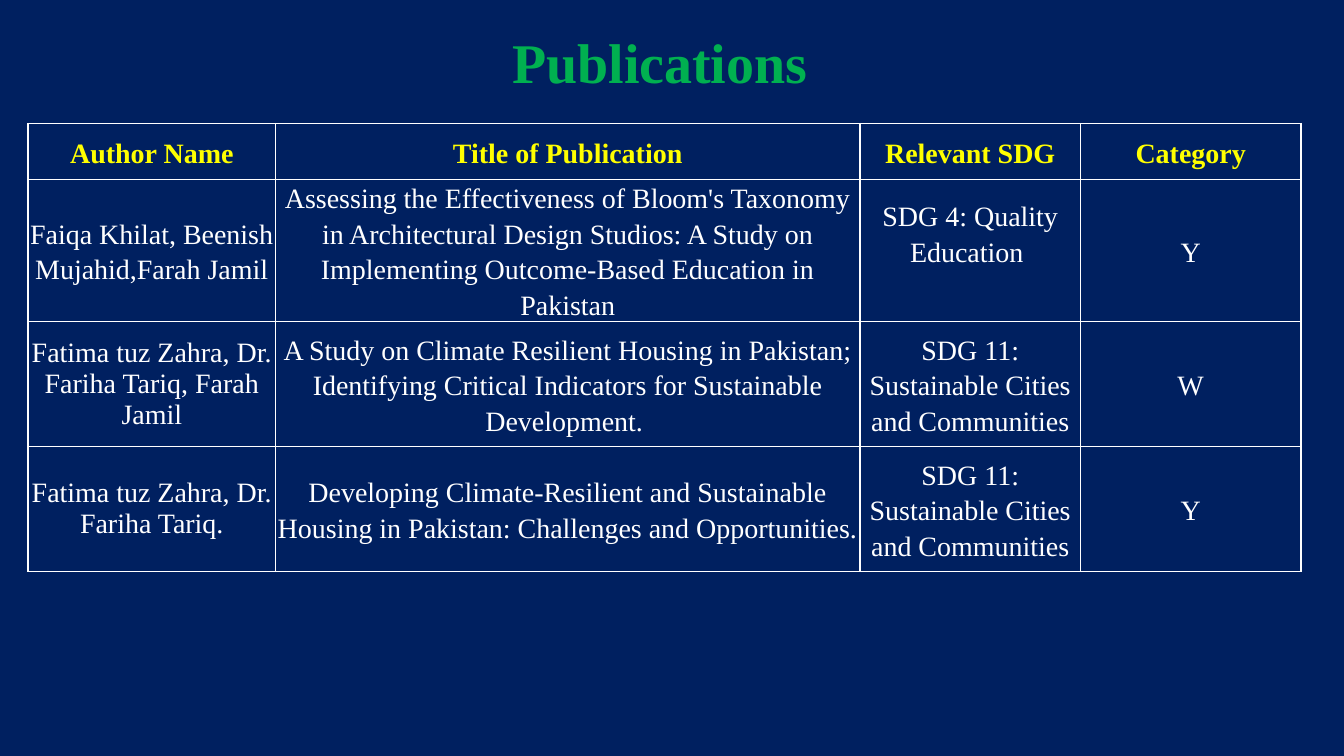
import dataclasses

import pptx
import pptx.dml.color
import pptx.enum.text
import pptx.oxml
import pptx.oxml.ns
import pptx.util

ALIGN = pptx.enum.text.PP_ALIGN
ANCHOR = pptx.enum.text.MSO_ANCHOR


@dataclasses.dataclass(frozen=True)
class Theme:
    font: str = "Times New Roman"
    back: str = "002060"
    title: str = "00B050"
    head: str = "FFFF00"
    body: str = "FFFFFF"
    edge: str = "FFFFFF"
    big: int = 30
    small: int = 15
    pad: float = 5.4


def rgb(code):
    return pptx.dml.color.RGBColor.from_string(code)


def write(frame, text, *, font, size, color, bold=False, lead=1.15):
    para = frame.paragraphs[0]
    para.alignment = ALIGN.CENTER
    para.line_spacing = lead
    run = para.add_run()
    run.text = text
    run.font.name = font
    run.font.size = pptx.util.Pt(size)
    run.font.color.rgb = rgb(color)
    run.font.bold = bold


def inset(item, side, top, base):
    item.margin_left = item.margin_right = pptx.util.Pt(side)
    item.margin_top = pptx.util.Pt(top)
    item.margin_bottom = pptx.util.Pt(base)


def border(cell, color):
    props = cell._tc.get_or_add_tcPr()
    for spot, side in enumerate(("lnL", "lnR", "lnT", "lnB")):
        props.insert(spot, pptx.oxml.parse_xml(
            f'<a:{side} {pptx.oxml.ns.nsdecls("a")} w="12700">'
            f'<a:solidFill><a:srgbClr val="{color}"/></a:solidFill></a:{side}>'))


class Page:
    cols = 100

    def __init__(self, deck, theme):
        self.theme = theme
        self.unit = deck.slide_width / self.cols
        self.slide = deck.slides.add_slide(deck.slide_layouts[6])
        fill = self.slide.background.fill
        fill.solid()
        fill.fore_color.rgb = rgb(theme.back)

    def span(self, *counts):
        return [round(count * self.unit) for count in counts]

    def title(self, text, box):
        frame = self.slide.shapes.add_textbox(*self.span(*box)).text_frame
        frame.word_wrap = True
        frame.vertical_anchor = ANCHOR.MIDDLE
        pad = self.theme.pad
        inset(frame, pad, pad / 2, pad / 2)
        write(frame, text, font=self.theme.font, size=self.theme.big,
              color=self.theme.title, bold=True, lead=0.9)

    def table(self, data, left, top, wide, high, tight, lift):
        size = self.span(left, top, sum(wide), sum(high))
        grid = self.slide.shapes.add_table(len(high), len(wide), *size).table
        for col, width in zip(grid.columns, self.span(*wide)):
            col.width = width
        for row, height in zip(grid.rows, self.span(*high)):
            row.height = height
        for r, line in enumerate(data):
            for c, text in enumerate(line):
                cell, head = grid.cell(r, c), r == 0
                cell.fill.solid()
                cell.fill.fore_color.rgb = rgb(self.theme.back)
                border(cell, self.theme.edge)
                cell.vertical_anchor = ANCHOR.TOP if head else ANCHOR.MIDDLE
                pad = self.theme.pad if head else 0
                inset(cell, pad, pad, lift.get((r, c), pad))
                write(cell.text_frame, text, font=self.theme.font,
                      size=self.theme.small, bold=head,
                      color=self.theme.head if head else self.theme.body,
                      lead=1 if (r, c) in tight else 1.15)


ROWS = [
    ("Author Name", "Title of Publication", "Relevant SDG", "Category"),
    ("Faiqa Khilat, Beenish Mujahid,Farah Jamil",
     "Assessing the Effectiveness of Bloom's Taxonomy in Architectural Design "
     "Studios: A Study on Implementing Outcome-Based Education in Pakistan",
     "SDG 4: Quality Education ", "Y"),
    ("Fatima tuz Zahra, Dr. Fariha Tariq, Farah Jamil",
     "A Study on Climate Resilient Housing in Pakistan; Identifying Critical "
     "Indicators for Sustainable Development. ",
     "SDG 11: Sustainable Cities and Communities", "W"),
    ("Fatima tuz Zahra, Dr. Fariha Tariq.",
     "Developing Climate-Resilient and Sustainable Housing in Pakistan: "
     "Challenges and Opportunities. ",
     "SDG 11: Sustainable Cities and Communities", "Y"),
]


def main():
    deck = pptx.Presentation()
    deck.slide_width = pptx.util.Inches(10)
    deck.slide_height = deck.slide_width * 9 // 16
    page = Page(deck, Theme())
    page.table(ROWS, 2.1, 9.2, (18.4, 43.5, 16.4, 16.4), (3.6, 9.5, 9.3, 9.3),
               tight={(2, 0), (3, 0)}, lift={(1, 2): 19})
    page.title("Publications", (0, 0, 98.2, 9.8))
    deck.save("out.pptx")


if __name__ == "__main__":
    main()
